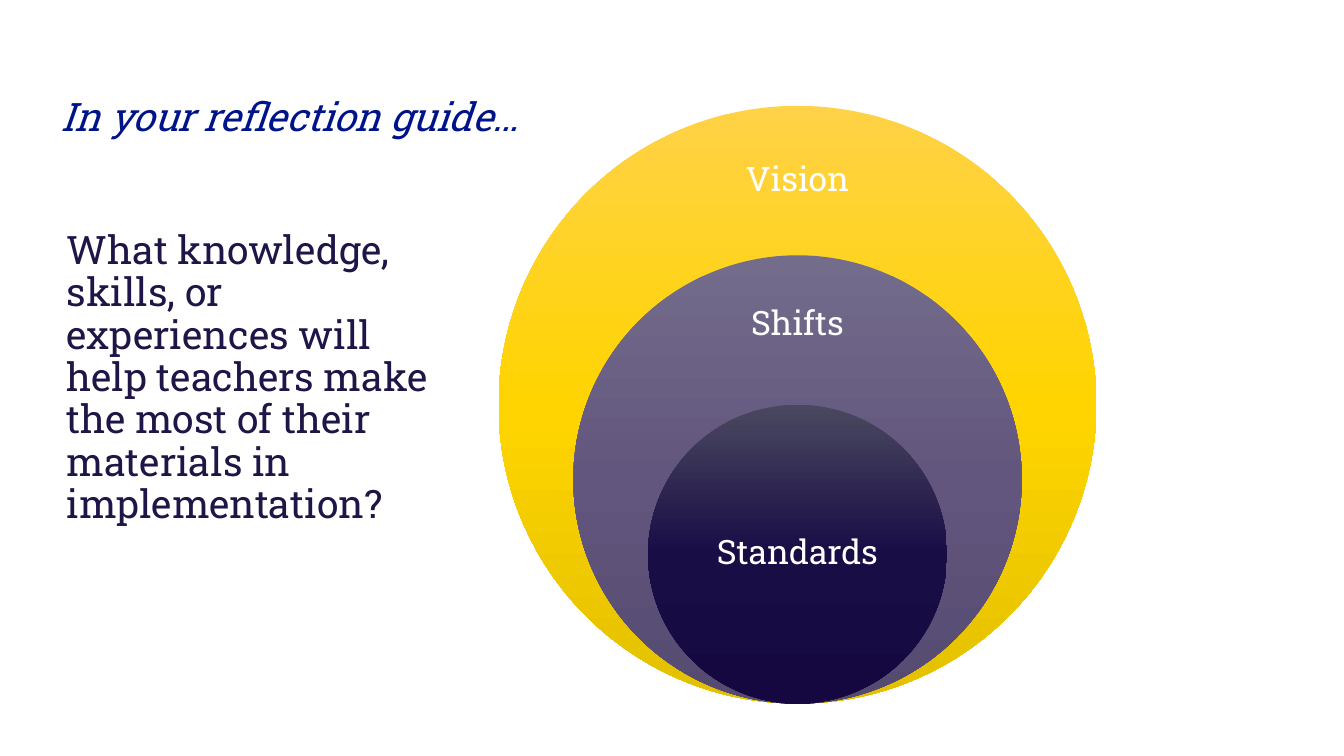
"""Build a reflection slide with three nested circles."""
from copy import deepcopy

from pptx import Presentation
from pptx.dml.color import RGBColor
from pptx.enum.shapes import MSO_SHAPE
from pptx.enum.text import MSO_ANCHOR, PP_ALIGN
from pptx.oxml.ns import qn
from pptx.util import Inches, Pt

OVAL = MSO_SHAPE.OVAL
TOP, MIDDLE = MSO_ANCHOR.TOP, MSO_ANCHOR.MIDDLE
LEFT, CENTER = PP_ALIGN.LEFT, PP_ALIGN.CENTER
FONT = "Roboto Slab"
WHITE = RGBColor(0xFF, 0xFF, 0xFF)
BLUE = RGBColor(0x00, 0x14, 0x89)
INDIGO = RGBColor(0x20, 0x15, 0x47)

HEADING = "In your reflection guide…"
QUESTION = ("What knowledge, skills, or experiences will help teachers "
            "make the most of their materials in implementation?")
RINGS = [
    {"label": "Vision", "scale": 1, "label_area": (1.35, 2.07, 0.89),
     "colors": ("FFD247", "FFD400", "E3C100")},
    {"label": "Shifts", "scale": 0.75, "label_area": (2.81, 2.07, 0.83),
     "colors": ("746C8B", "62567E", "554A70")},
    {"label": "Standards", "scale": 0.5, "label_area": (4.75, 2.1, 1.48),
     "colors": ("4A485F", "190D46", "150840")},
]
STOP_POSITIONS = (0, 0.5, 1)
CENTER_X, BOTTOM, DIAMETER = 7.91, 6.98, 5.93


def add_text(page, text, area, size, color, insets, align=LEFT, anchor=TOP,
             line_spacing=1.0, italic=False):
    box = page.shapes.add_textbox(*map(Inches, area))
    frame = box.text_frame
    frame.text = text
    frame.word_wrap = True
    frame.vertical_anchor = anchor
    (frame.margin_left, frame.margin_top,
     frame.margin_right, frame.margin_bottom) = map(Inches, insets)
    para = frame.paragraphs[0]
    para.alignment = align
    para.line_spacing = line_spacing
    font = para.runs[0].font
    font.name, font.size, font.italic = FONT, Pt(size), italic
    font.color.rgb = color


def add_circle(page, scale, colors):
    size = DIAMETER * scale
    circle = page.shapes.add_shape(
        OVAL, Inches(CENTER_X - size / 2), Inches(BOTTOM - size),
        Inches(size), Inches(size))
    circle.shadow.inherit = False
    circle.line.fill.background()
    circle.fill.gradient()
    circle.fill.gradient_angle = 270
    stop_list = next(circle.element.iter(qn("a:gsLst")))
    stop_list.append(deepcopy(stop_list[-1]))
    for stop, position, color in zip(circle.fill.gradient_stops,
                                     STOP_POSITIONS, colors):
        stop.position = position
        stop.color.rgb = RGBColor.from_string(color)


def main():
    deck = Presentation()
    deck.slide_width, deck.slide_height = Inches(13.33), Inches(7.5)
    page = deck.slides.add_slide(deck.slide_layouts[6])
    add_text(page, QUESTION, (0.5, 2.24, 3.92, 4.74), 28, INDIGO,
             (0.16, 0.05, 0.1, 0.05), line_spacing=0.9)
    add_text(page, HEADING, (0.5, 0.87, 6.94, 0.57), 28, BLUE,
             (0.1, 0.05, 0.1, 0.05), italic=True)
    for ring in RINGS:
        add_circle(page, ring["scale"], ring["colors"])
        top, width, height = ring["label_area"]
        add_text(page, ring["label"], (CENTER_X - width / 2, top, width, height),
                 24, WHITE, (0.19,) * 4, CENTER, MIDDLE, 0.9)
    deck.save("out.pptx")


if __name__ == "__main__":
    main()
